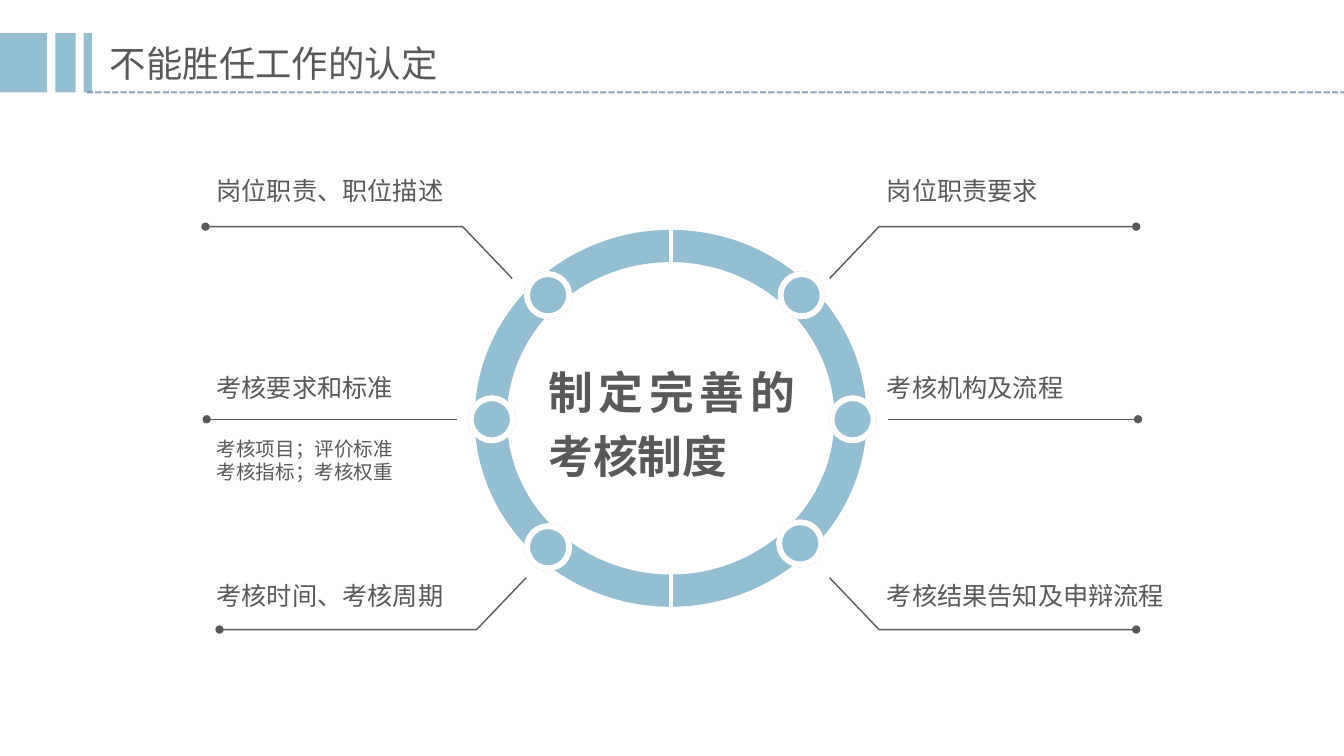
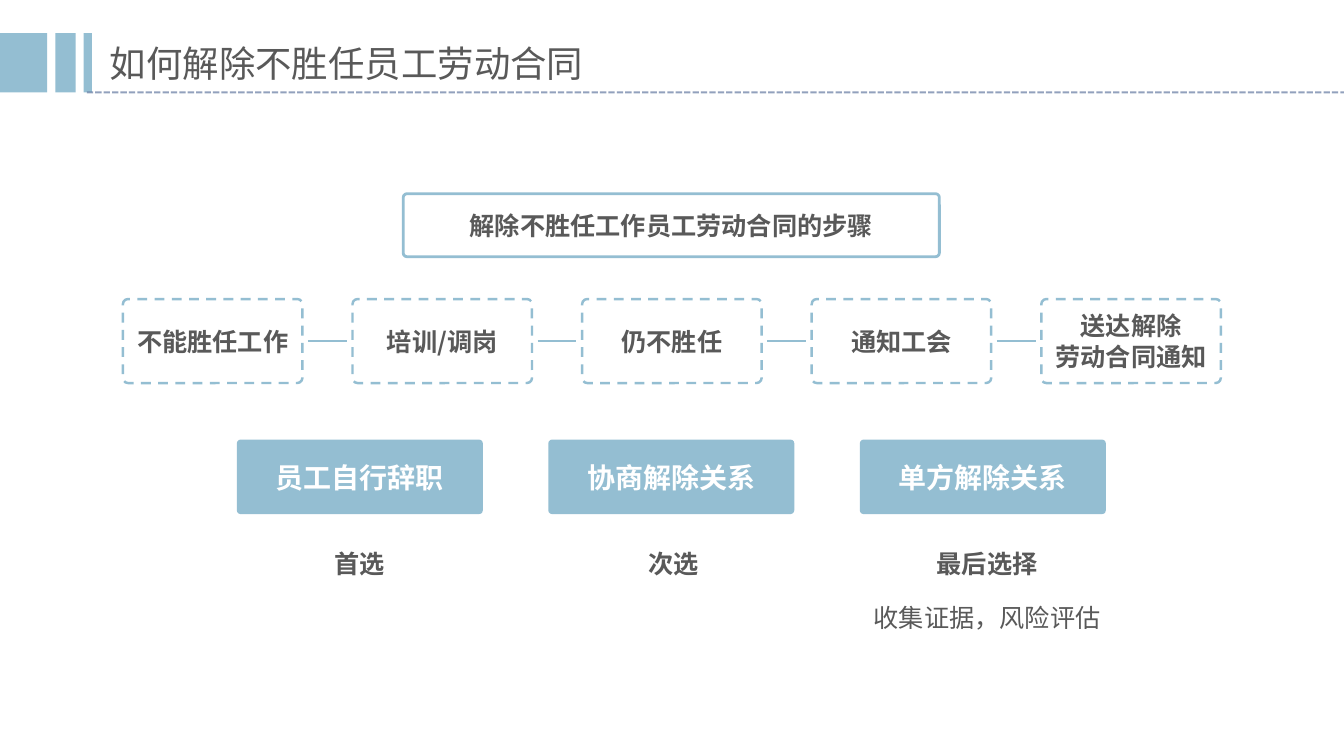
from lxml import etree
from pptx import Presentation
from pptx.dml.color import RGBColor
from pptx.enum import dml, shapes, text
from pptx.oxml.ns import qn
from pptx.util import Pt

COLORS = {"blue": "94BED2", "grey": "595959", "white": "FFFFFF", "rule": "647AA1"}
FONT = "Noto Sans CJK SC"
BANDS = [(0, 33.8), (39.6, 14.4), (59.8, 5.8)]
BAND_TOP, BAND_HEIGHT = 23.6, 42.4
SHAPE = shapes.MSO_SHAPE
ALIGN = text.PP_ALIGN
DASH = dml.MSO_LINE


def rgb(name):
    return RGBColor.from_string(COLORS[name])


def set_alpha(color_node, percent):
    etree.SubElement(color_node, qn("a:alpha"), val=str(percent * 1000))


def write(frame, content, size=18, color="grey", bold=False, align=ALIGN.LEFT,
          spacing=None, anchor=text.MSO_ANCHOR.TOP):
    """Fill a text frame, one paragraph for each line of the content."""
    frame.word_wrap = True
    frame.auto_size = text.MSO_AUTO_SIZE.NONE
    frame.vertical_anchor = anchor
    for index, line in enumerate(content.split("\n")):
        para = frame.add_paragraph() if index else frame.paragraphs[0]
        para.alignment = align
        if spacing:
            para.line_spacing = spacing
        span = para.add_run()
        span.text = line
        span.font.size = Pt(size)
        span.font.bold = bold
        span.font.name = FONT
        span.font.color.rgb = rgb(color)
        east_asian = etree.SubElement(span.font._element, qn("a:ea"))
        east_asian.set("typeface", FONT)


def style_line(line, color, width, dash=None, oval_end=False):
    line.color.rgb = rgb(color)
    line.width = Pt(width)
    if dash:
        line.dash_style = dash
    if oval_end:
        etree.SubElement(line._get_or_add_ln(), qn("a:tailEnd"), type="oval")


def add_text(page, left, top, width, height, content, **style):
    box = page.shapes.add_textbox(Pt(left), Pt(top), Pt(width), Pt(height))
    write(box.text_frame, content, **style)


def add_figure(page, kind, left, top, width, height, fill=None, outline=None, corner=None):
    """Add a preset shape; outline is (color, width) or (color, width, dash)."""
    figure = page.shapes.add_shape(kind, Pt(left), Pt(top), Pt(width), Pt(height))
    figure.shadow.inherit = False
    if fill:
        figure.fill.solid()
        figure.fill.fore_color.rgb = rgb(fill)
    else:
        figure.fill.background()
    if outline:
        style_line(figure.line, *outline)
    else:
        figure.line.fill.background()
    if corner:
        figure.adjustments[0] = corner
    return figure


def add_card(page, left, top, width, height, content, fill=None, outline=None,
             corner=0.06, **style):
    card = add_figure(page, SHAPE.ROUNDED_RECTANGLE, left, top, width, height,
                      fill, outline, corner)
    write(card.text_frame, content, bold=True, align=ALIGN.CENTER,
          anchor=text.MSO_ANCHOR.MIDDLE, **style)


def add_line(page, start, end, color, width, **style):
    line = page.shapes.add_connector(shapes.MSO_CONNECTOR.STRAIGHT,
                                     *(Pt(value) for value in (*start, *end)))
    style_line(line.line, color, width, **style)
    etree.SubElement(line._element.spPr, qn("a:effectLst"))
    return line


def add_callout(page, tip, side, direction):
    """Draw a bent leader; side and direction are -1 or 1 (left/right, up/down)."""
    x, y = tip
    level = y + direction * 37
    builder = page.shapes.build_freeform(Pt(x), Pt(y))
    builder.add_line_segments([(Pt(x + side * 35.3), Pt(level)),
                               (Pt(x + side * 219), Pt(level))], close=False)
    leader = builder.convert_to_shape()
    leader.shadow.inherit = False
    leader.fill.background()
    style_line(leader.line, "grey", 1, oval_end=True)


def add_node(page, left, top):
    """Add a white-rimmed dot with a faint shadow on the ring."""
    node = add_figure(page, SHAPE.OVAL, left, top, 30.2, 30.2, "blue", ("white", 4.25))
    effects = node._element.spPr.find(qn("a:effectLst"))
    shadow = etree.SubElement(effects, qn("a:outerShdw"), blurRad="0", dist="0", dir="0")
    set_alpha(etree.SubElement(shadow, qn("a:srgbClr"), val=COLORS["grey"]), 40)


def add_page(deck, title):
    page = deck.slides.add_slide(deck.slide_layouts[5])
    for left, width in BANDS:
        add_figure(page, SHAPE.RECTANGLE, left, BAND_TOP, width, BAND_HEIGHT, "blue")
    rule = add_line(page, (62, 66), (960, 66), "rule", 1.5, dash=DASH.SQUARE_DOT)
    set_alpha(next(rule.line._get_or_add_ln().iter(qn("a:srgbClr"))), 70)
    box = page.shapes.title
    box.left, box.top, box.width, box.height = Pt(71.3), Pt(19.4), Pt(800), Pt(44.6)
    write(box.text_frame, title, size=26, spacing=1.2)
    return page


def build_assessment(deck):
    page = add_page(deck, "不能胜任工作的认定")
    add_figure(page, SHAPE.OVAL, 350.6, 175.7, 257, 246.2, outline=("blue", 23))
    for left, top in [(376.4, 195.8), (557.5, 195.8), (336.2, 284.4),
                      (593.9, 284.4), (376.4, 375.8), (556.5, 373)]:
        add_node(page, left, top)
    for top in (163.4, 409.5):
        add_line(page, (479, top), (479, top + 25.6), "white", 2.75)
    for tip, side, direction in [((592.6, 198.9), 1, -1), ((365.8, 198.9), -1, -1),
                                 ((592.6, 412.7), 1, 1), ((375.8, 412.7), -1, 1)]:
        add_callout(page, tip, side, direction)
    for start, end in [(634.3, 812.9), (326.2, 147.6)]:
        add_line(page, (start, 299.5), (end, 299.5), "grey", 0.5, oval_end=True)
    add_text(page, 384.5, 249.1, 190.8, 100, "制定完善的考核制度", size=32, bold=True,
             align=ALIGN.JUSTIFY, spacing=1.2)
    labels = [(121.7, "岗位职责、职位描述", "岗位职责要求"),
              (262.1, "考核要求和标准", "考核机构及流程"),
              (411.1, "考核时间、考核周期", "考核结果告知及申辩流程")]
    for top, *pair in labels:
        for left, label in zip((147.6, 626.4), pair):
            add_text(page, left, top, 214, 28.8, label)
    add_text(page, 147.6, 308.2, 151.2, 41, "考核项目；评价标准\n考核指标；考核权重", size=14)


def build_steps(deck):
    page = add_page(deck, "如何解除不胜任员工劳动合同")
    add_card(page, 288, 138.4, 383, 45, "解除不胜任工作员工劳动合同的步骤",
             outline=("blue", 2))

    steps = ["不能胜任工作", "培训/调岗", "仍不胜任", "通知工会", "送达解除\n劳动合同通知"]
    step_left, step_width, step_pitch, margin = 87.8, 128.2, 164, 4
    for index, step in enumerate(steps):
        left = step_left + index * step_pitch
        add_card(page, left, 213.6, step_width, 60, step,
                 outline=("blue", 1.75, DASH.DASH))
        if index:
            add_line(page, (left - step_pitch + step_width + margin, 243.6),
                     (left - margin, 243.6), "blue", 1.75)

    options = [("员工自行辞职", "首选"), ("协商解除关系", "次选"), ("单方解除关系", "最后选择")]
    caption = {"align": ALIGN.CENTER, "spacing": 1.5}
    for index, (option, rank) in enumerate(options):
        add_card(page, 169.2 + index * 222.5, 314, 175.7, 53.2, option, fill="blue",
                 size=20, color="white", corner=0.05)
        caption_left = 160.6 + index * 224
        add_text(page, caption_left, 377.3, 193, 39.6, rank, bold=True, **caption)
    add_text(page, caption_left, 416.2, 193, 39.6, "收集证据，风险评估", **caption)


def main():
    deck = Presentation()
    deck.slide_width, deck.slide_height = Pt(960), Pt(540)
    build_assessment(deck)
    build_steps(deck)
    deck.save("out.pptx")


if __name__ == "__main__":
    main()
